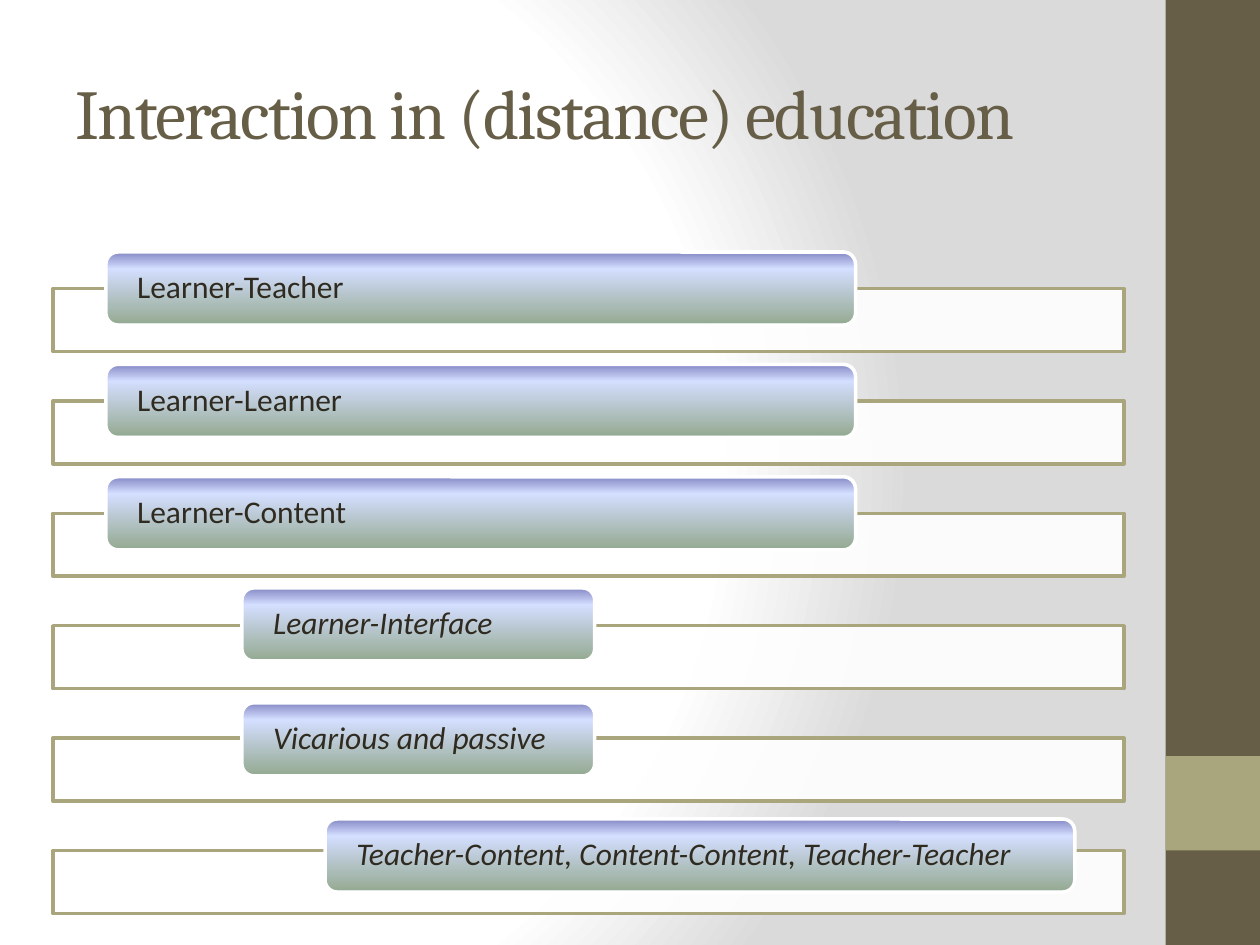
from pptx import Presentation
from pptx.dml.color import RGBColor
from pptx.enum.shapes import MSO_SHAPE
from pptx.enum.text import MSO_ANCHOR, PP_ALIGN
from pptx.oxml import parse_xml
from pptx.oxml.ns import nsdecls, qn
from pptx.util import Inches, Pt

RECT, ROUND = MSO_SHAPE.RECTANGLE, MSO_SHAPE.ROUNDED_RECTANGLE
MIDDLE, LEFT = MSO_ANCHOR.MIDDLE, PP_ALIGN.LEFT

# Content: label, left, width, rise above its bar, italic
TITLE = "Interaction in (distance) education"
WIDE, SLIM = 5.95, 2.8
ROWS = [
    ("Learner-Teacher", 0.84, WIDE, 0.29, False),
    ("Learner-Learner", 0.84, WIDE, 0.29, False),
    ("Learner-Content", 0.84, WIDE, 0.29, False),
    ("Learner-Interface", 1.92, SLIM, 0.3, True),
    ("Vicarious and passive", 1.92, SLIM, 0.28, True),
    ("Teacher-Content, Content-Content, Teacher-Teacher", 2.58, WIDE, 0.25, True),
]

# Look
BROWN, KHAKI, WHITE, INK = "675E47", "A9A57C", "FFFFFF", "2F2B20"
BACK = [(0, WHITE), (75, WHITE), (100, "DADADA")]
BLEND = [(0, "8488C4"), (23, "D4DEFF"), (97, "96AB94"), (100, "D4DEFF")]
GLOW = ('<a:path path="circle"><a:fillToRect l="20000" t="50000" '
        'r="100000" b="50000"/></a:path>')
DOWN = '<a:lin ang="5400000" scaled="0"/>'

# Grid
W, H = 10, 7.5
TOP, STEP = 2.29, 0.892
BAR_X, BAR_W, BAR_H, TAB_H = 0.42, 8.5, 0.5, 0.58
SIDE = 0.75


def color(code):
    return RGBColor.from_string(code)


def blend(fill, root, stops, way):
    fill.gradient()
    old = root.find(".//" + qn("a:gradFill"))
    marks = "".join(f'<a:gs pos="{pos * 1000}"><a:srgbClr val="{code}"/></a:gs>'
                    for pos, code in stops)
    new = parse_xml(f'<a:gradFill {nsdecls("a")} rotWithShape="1">'
                    f'<a:gsLst>{marks}</a:gsLst>{way}</a:gradFill>')
    old.getparent().replace(old, new)


def box(kind, x, y, w, h, fill=None, line=None):
    shape = slide.shapes.add_shape(kind, *map(Inches, (x, y, w, h)))
    shape.shadow.inherit = False
    if fill:
        shape.fill.solid()
        shape.fill.fore_color.rgb = color(fill)
    if line:
        shape.line.color.rgb = color(line)
        shape.line.width = Pt(2)
    else:
        shape.line.fill.background()
    return shape


def write(shape, text, code, inset, **form):
    frame = shape.text_frame
    look = dict(vertical_anchor=MIDDLE, word_wrap=True,
                margin_left=Inches(inset), margin_right=Inches(inset))
    for key, value in look.items():
        setattr(frame, key, value)
    para = frame.paragraphs[0]
    para.alignment, para.line_spacing = LEFT, 0.9
    run = para.add_run()
    run.text = text
    run.font.color.rgb = color(code)
    for key, value in form.items():
        setattr(run.font, key, value)
    return run


deck = Presentation()
deck.slide_width, deck.slide_height = Inches(W), Inches(H)
slide = deck.slides.add_slide(deck.slide_layouts[5])
blend(slide.background.fill, slide.element, BACK, GLOW)

# Side band
box(RECT, W - SIDE, 0, SIDE, H, BROWN)
box(RECT, W - SIDE, H * 0.8, SIDE, SIDE, KHAKI)

# Title
head = slide.shapes.title
head.left, head.top, head.width, head.height = map(Inches, (0.5, 0.3, 8.33, 1.25))
run = write(head, TITLE, BROWN, 0.1, name="Cambria", size=Pt(40))
run.font._element.set("spc", "-100")

# Bars, each with its label tab
for i, (text, x, w, rise, slant) in enumerate(ROWS):
    y = TOP + i * STEP
    bar = box(RECT, BAR_X, y, BAR_W, BAR_H, WHITE, KHAKI)
    tint = bar.element.spPr.find(qn("a:solidFill"))[0]
    tint.append(parse_xml(f'<a:alpha {nsdecls("a")} val="90000"/>'))
    tab = box(ROUND, x, y - rise, w, TAB_H, line=WHITE)
    blend(tab.fill, tab.element, BLEND, DOWN)
    write(tab, text, INK, 0.22, name="Calibri", size=Pt(18), italic=slant)

deck.save("out.pptx")
